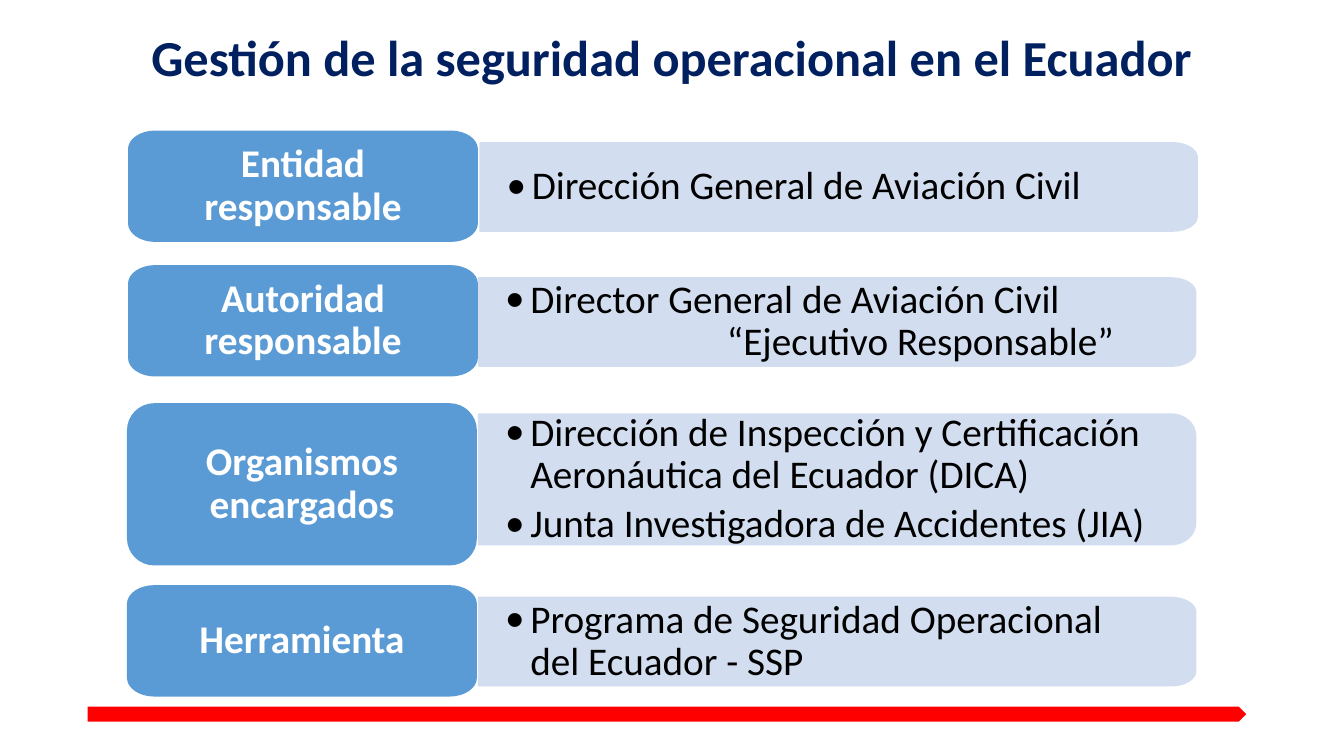
from lxml.etree import SubElement as Sub
from pptx import Presentation
from pptx.dml.color import RGBColor as Rgb
from pptx.enum.shapes import MSO_SHAPE as Kind
from pptx.enum.text import MSO_ANCHOR as Anchor, MSO_AUTO_SIZE as Fit, PP_ALIGN as Align
from pptx.oxml.ns import qn
from pptx.util import Inches, Pt

hues = {"navy": "002060", "red": "FF0000", "blue": "5B9BD5",
        "pale": "D2DEEF", "white": "FFFFFF", "black": "000000"}

deck = Presentation()
deck.slide_width = Inches(13.33)
deck.slide_height = Inches(7.5)
col = deck.slide_width / 1333
row = deck.slide_height / 750
slide = deck.slides.add_slide(deck.slide_layouts[5])


def block(left, top, wide, high, bend, both, hue, pads):
    rise = high / 6
    right, base = left + wide, top + high
    arcs = [((right - bend, top), (right, top), (right, top + rise)),
            ((right, base - rise), (right, base), (right - bend, base))]
    if both:
        arcs += [((left + bend, base), (left, base), (left, base - rise)),
                 ((left, top + rise), (left, top), (left + bend, top))]
    dots = []
    for first, peak, last in arcs:
        pulls = [tuple(a + 0.55 * (b - a) for a, b in zip(end, peak)) for end in (first, last)]
        dots += [first, *pulls, last]
    if not both:
        dots += [(left, base), (left, top)]
    dots = [(round(x * col), round(y * row)) for x, y in dots]
    path = slide.shapes.build_freeform(*dots[0])
    path.add_line_segments(dots[1:], close=True)
    shape = path.convert_to_shape()
    lines = shape._element.findall(".//" + qn("a:lnTo"))
    for spot in range(len(arcs)):
        trio = lines[4 * spot:4 * spot + 3]
        trio[0].tag = qn("a:cubicBezTo")
        for line in trio[1:]:
            trio[0].append(line[0])
            line.getparent().remove(line)
    shape.shadow.inherit = False
    shape.fill.solid()
    shape.fill.fore_color.rgb = Rgb.from_string(hues[hue])
    shape.line.fill.background()
    frame = shape.text_frame
    frame.word_wrap = True
    frame.vertical_anchor = Anchor.MIDDLE
    frame.margin_left, frame.margin_right = round(pads[0] * col), round(pads[1] * col)
    frame.margin_top = frame.margin_bottom = round(pads[2] * row)
    return shape


def write(para, text, size, hue, bold, align):
    para.alignment = align
    for spot, part in enumerate(text.split("\n")):
        if spot:
            para.add_line_break()
        run = para.add_run()
        run.text = part
        run.font.name = "Calibri"
        run.font.size = Pt(size)
        run.font.bold = bold
        run.font.color.rgb = Rgb.from_string(hues[hue])


title = slide.shapes.title
title.left, title.top = round(col), round(21 * row)
title.width, title.height = round(1331 * col), round(54 * row)
title.text_frame.auto_size = Fit.NONE
title.text_frame.vertical_anchor = Anchor.TOP
write(title.text_frame.paragraphs[0], "Gestión de la seguridad operacional en el Ecuador",
      36, "navy", True, Align.CENTER)

bar = slide.shapes.add_shape(Kind.PENTAGON, round(87 * col), round(701 * row),
                             round(1149 * col), round(15 * row))
bar.shadow.inherit = False
bar.fill.solid()
bar.fill.fore_color.rgb = Rgb.from_string(hues["red"])
bar.line.fill.background()

bands = [
    (127, 129.5, 110.5, 475.5, 141, 89, "Entidad responsable",
     ["Dirección General de Aviación Civil"]),
    (127, 263, 110.5, 474, 275, 89, "Autoridad responsable",
     ["Director General de Aviación Civil\n\t“Ejecutivo Responsable”"]),
    (126, 400, 161, 474, 410, 131, "Organismos encargados",
     ["Dirección de Inspección y Certificación Aeronáutica del Ecuador (DICA)",
      "Junta Investigadora de Accidentes (JIA)"]),
    (126, 580.5, 110.5, 474, 592, 89, "Herramienta",
     ["Programa de Seguridad Operacional\ndel Ecuador - SSP"]),
]

for left, top, high, side, crest, deep, name, items in bands:
    panel = block(side, crest, 712.5, deep, 25, False, "pale", (27, 34, 20))
    frame = panel.text_frame
    for spot, text in enumerate(items):
        para = frame.add_paragraph() if spot else frame.paragraphs[0]
        write(para, text, 28, "black", False, Align.LEFT)
        para.level = 1
        para.line_spacing = 0.9
        para.space_before = Pt(5 if spot else 0)
        props = para._p.get_or_add_pPr()
        props.set("marL", str(round(25 * col)))
        props.set("indent", str(round(-25 * col)))
        Sub(props, qn("a:buFont"), typeface="Calibri")
        Sub(props, qn("a:buChar"), char="•")
        if "\t" in text:
            stops = Sub(props, qn("a:tabLst"))
            Sub(stops, qn("a:tab"), pos=str(round(220 * col)), algn="l")

    tag = block(left, top, 347, high, 27, True, "blue", (20, 20, 14))
    para = tag.text_frame.paragraphs[0]
    write(para, name, 28, "white", True, Align.CENTER)
    para.line_spacing = 0.9

deck.save("out.pptx")
